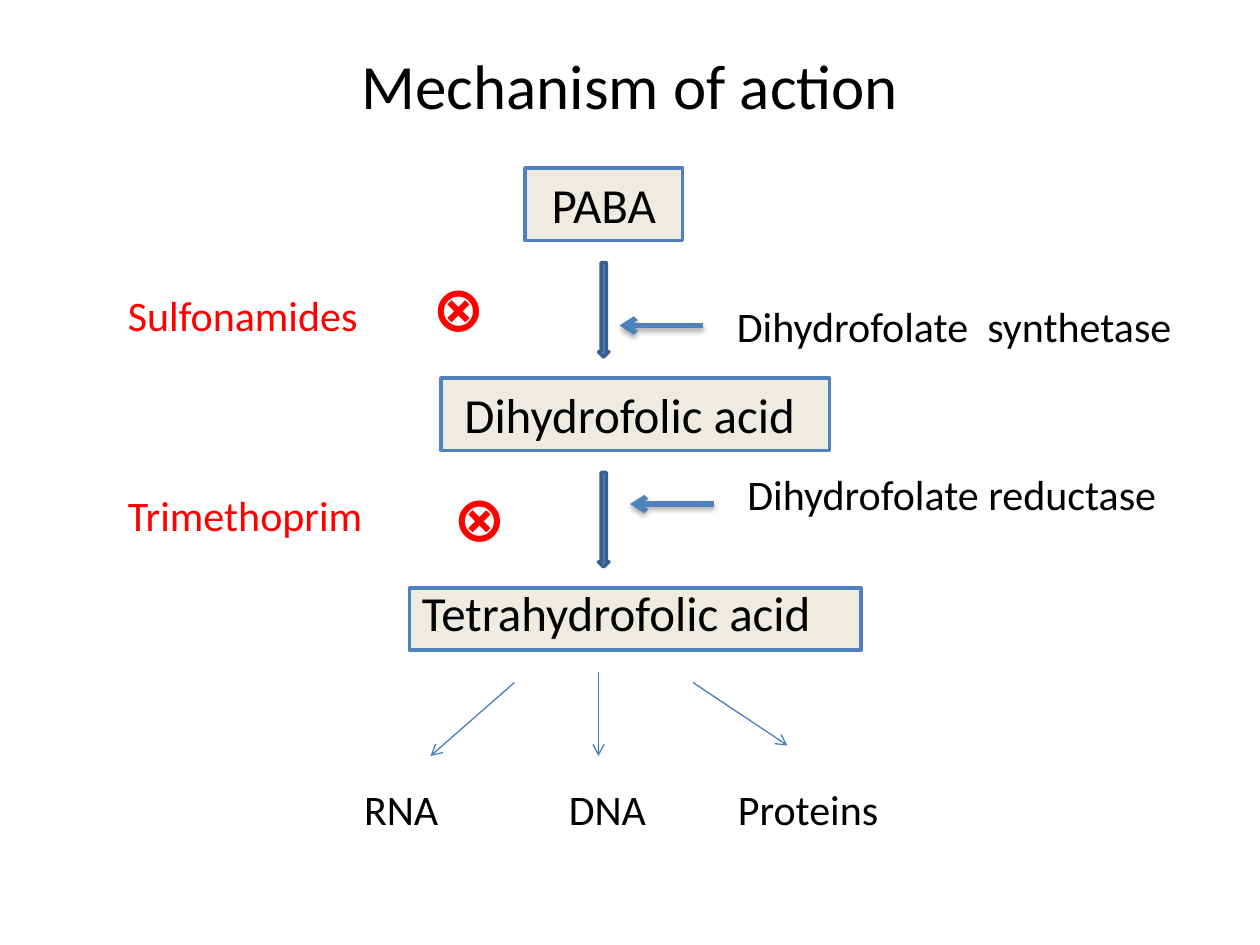
from lxml import etree
from pptx import Presentation
from pptx.dml.color import RGBColor
from pptx.enum.shapes import MSO_CONNECTOR, MSO_SHAPE
from pptx.enum.text import MSO_ANCHOR, MSO_AUTO_SIZE, PP_ALIGN
from pptx.oxml.ns import qn
from pptx.util import Inches, Pt

RECT, DOWN_ARROW = MSO_SHAPE.RECTANGLE, MSO_SHAPE.DOWN_ARROW
STRAIGHT = MSO_CONNECTOR.STRAIGHT
TOP, FIT = MSO_ANCHOR.TOP, MSO_AUTO_SIZE.SHAPE_TO_FIT_TEXT
LEFT, CENTER = PP_ALIGN.LEFT, PP_ALIGN.CENTER

FONT = "Calibri"
BLACK, RED, BLUE = "000000", "FF0000", "4F81BD"
BEIGE, DARK_BLUE, THIN_BLUE = "EEECE1", "3A5F8C", "4B7EBC"


def grid(*units):
    return [Inches(u / 12) for u in units]


def rgb(color):
    return RGBColor.from_string(color)


def write(sp, text, size, color=BLACK, align=LEFT, spacing=None, bold=False):
    tf = sp.text_frame
    tf.text = text
    p = tf.paragraphs[0]
    p.alignment = align
    p.line_spacing = spacing
    p.font.name = FONT
    p.font.size = Pt(size)
    p.font.bold = bold
    p.font.color.rgb = rgb(color)
    return tf


def add_filled(slide, kind, place, fill, line):
    sp = slide.shapes.add_shape(kind, *grid(*place))
    sp.shadow.inherit = False
    sp.fill.solid()
    sp.fill.fore_color.rgb = rgb(fill)
    sp.line.color.rgb = rgb(line)
    sp.line.width = Pt(2)
    return sp


def add_compound(slide, text, place, align=CENTER, spacing=None):
    sp = add_filled(slide, RECT, place, BEIGE, BLUE)
    tf = write(sp, text, 28, align=align, spacing=spacing)
    tf.vertical_anchor = TOP
    tf.word_wrap = True


def add_label(slide, text, place, size=24, color=BLACK, spacing=None, bold=False):
    sp = slide.shapes.add_textbox(*grid(*place))
    tf = write(sp, text, size, color, spacing=spacing, bold=bold)
    tf.word_wrap = False
    tf.auto_size = FIT


def add_arrow(slide, start, end, color=THIN_BLUE, width=0.75, shadow=False):
    line = slide.shapes.add_connector(STRAIGHT, *grid(*start, *end))
    line.line.color.rgb = rgb(color)
    line.line.width = Pt(width)
    ln = line.line._get_or_add_ln()
    etree.SubElement(ln, qn("a:tailEnd"), type="arrow")
    effects = etree.SubElement(line._element.spPr, qn("a:effectLst"))
    if shadow:
        outer = etree.SubElement(effects, qn("a:outerShdw"), blurRad=str(Pt(3.1)),
                                 dist=str(Pt(1.8)), dir="5400000", rotWithShape="0")
        tint = etree.SubElement(outer, qn("a:srgbClr"), val=BLACK)
        etree.SubElement(tint, qn("a:alpha"), val="35000")


def main():
    prs = Presentation()
    prs.slide_width, prs.slide_height = grid(120, 90)
    slide = prs.slides.add_slide(prs.slide_layouts[5])

    title = slide.shapes.title
    title.left, title.top, title.width, title.height = grid(6, 4, 108, 8)
    write(title, "Mechanism of action", 36, align=CENTER)

    add_compound(slide, "PABA", (50, 16, 15, 6.9))
    add_compound(slide, "Dihydrofolic acid ", (42, 36, 37, 6.9))
    add_compound(slide, "Tetrahydrofolic acid", (39, 56, 43, 5.9), LEFT, 0.8)

    add_label(slide, "Dihydrofolate  synthetase", (69, 28, 44.2, 6))
    add_label(slide, "Dihydrofolate reductase", (70, 45, 43.6, 5.2), spacing=0.8)

    for drug, top, width in (("Sulfonamides", 27, 24.5), ("Trimethoprim", 46, 25.9)):
        add_label(slide, drug, (11, top, width, 6), color=RED)
    for product, left, width in (("RNA", 33.5, 9.6), ("DNA", 53, 10.8),
                                 ("Proteins", 69.1, 16.8)):
        add_label(slide, product, (left, 74, width, 6))

    for top in (25, 45):
        add_filled(slide, DOWN_ARROW, (57, top, 1, 9), BLUE, DARK_BLUE)
    for start, end in (((49, 65), (41, 72)), ((66, 65), (75, 71)), ((57, 64), (57, 72))):
        add_arrow(slide, start, end)
    for left, row in ((59, 31), (60, 48)):
        add_arrow(slide, (left + 8, row), (left, row), BLUE, 3, shadow=True)
    for left, top in ((40, 25), (42, 45)):
        add_label(slide, "⊗", (left, top, 7.1, 8.5), 36, RED, bold=True)

    prs.save("out.pptx")


if __name__ == "__main__":
    main()
